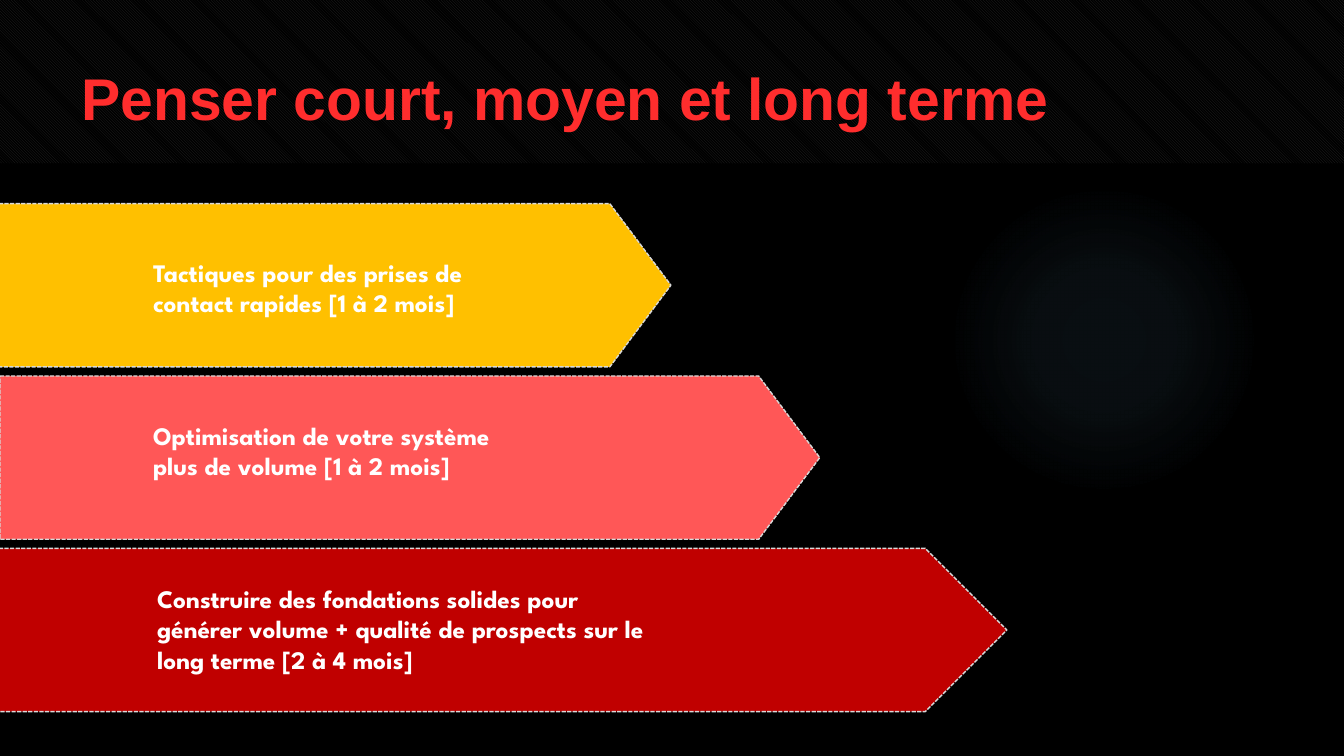
from lxml import etree
from pptx import Presentation
from pptx import util as u
from pptx.dml.color import RGBColor
from pptx.enum import dml, shapes, text
from pptx.oxml import parse_xml
from pptx.oxml.ns import nsdecls, qn


def tint(code):
    return RGBColor.from_string(code)


class Deck:
    """Style and current slide; places are percent of the slide's size."""

    white, edge, red = "FFFFFF", "D9D9D9", "FF2D2D"
    head, body = "Arial", "League Spartan"

    def __init__(self):
        self.prs = Presentation()
        self.prs.slide_width = u.Inches(13.333)
        self.prs.slide_height = u.Inches(7.5)
        self.slide = self.prs.slides.add_slide(self.prs.slide_layouts[6])
        back = self.slide.background.fill
        back.solid()
        back.fore_color.rgb = tint("000000")

    def place(self, x, y, w, h):
        wide, high = self.prs.slide_width, self.prs.slide_height
        return [round(share * full / 100)
                for share, full in ((x, wide), (y, high), (w, wide), (h, high))]

    def shape(self, kind, box):
        item = self.slide.shapes.add_shape(kind, *self.place(*box))
        item.shadow.inherit = False
        item.line.fill.background()
        return item

    def glow(self, box, code, stops):
        ball = self.shape(shapes.MSO_SHAPE.OVAL, box)
        grad = parse_xml(f'<a:gradFill {nsdecls("a")}><a:gsLst/><a:path path="circle">'
                         '<a:fillToRect l="50000" t="50000" r="50000" b="50000"/>'
                         '</a:path></a:gradFill>')
        for pos, alpha in stops:
            stop = etree.SubElement(grad[0], qn("a:gs"), pos=str(pos * 1000))
            hue = etree.SubElement(stop, qn("a:srgbClr"), val=code)
            etree.SubElement(hue, qn("a:alpha"), val=str(alpha * 1000))
        ball._element.spPr.find(qn("a:prstGeom")).addnext(grad)

    def band(self, box, fore, back):
        fill = self.shape(shapes.MSO_SHAPE.RECTANGLE, box).fill
        fill.patterned()
        fill.pattern = dml.MSO_PATTERN.DARK_DOWNWARD_DIAGONAL
        fill.fore_color.rgb = tint(fore)
        fill.back_color.rgb = tint(back)

    def arrow(self, box, code, tip):
        item = self.shape(shapes.MSO_SHAPE.PENTAGON, box)
        item.adjustments[0] = tip
        item.fill.solid()
        item.fill.fore_color.rgb = tint(code)
        item.line.color.rgb = tint(self.edge)
        item.line.width = u.Pt(1)
        item.line.dash_style = dml.MSO_LINE.SQUARE_DOT

    def words(self, box, copy, size, face, code, inset=0.05):
        frame = self.slide.shapes.add_textbox(*self.place(*box)).text_frame
        frame.word_wrap = True
        frame.margin_top = u.Inches(inset)
        frame.auto_size = text.MSO_AUTO_SIZE.NONE
        frame.text = copy
        for run in frame.paragraphs[0].runs:
            run.font.size = u.Pt(size)
            run.font.name = face
            run.font.bold = True
            run.font.color.rgb = tint(code)


def main():
    deck = Deck()

    # Backdrop and title
    deck.glow((70.58, 24.4, 23.1, 41.07), "7AC4F0", [(0, 7), (36, 6), (69, 0)])
    deck.band((0, 0, 100, 21.6), "262626", "000000")
    deck.words((5.33, 6.67, 89.33, 20.4), "Penser court, moyen et long terme",
               42, deck.head, deck.red, inset=0.11)

    # One arrow per term: left, width, colour, tip, then its label
    terms = [
        (-0.08, 50, "FFC000", 0.374, (10.65, 33.33, 28.5, 9.47),
         "Tactiques pour des prises de contact rapides [1 à 2 mois]"),
        (0, 61, "FF5757", 0.374, (10.65, 54.93, 34, 9.47),
         "Optimisation de votre système\vplus de volume [1 à 2 mois]"),
        (-0.08, 75, "C00000", 0.5, (10.95, 76.53, 39, 13.47),
         "Construire des fondations solides pour générer volume + qualité "
         "de prospects sur le long terme [2 à 4 mois]"),
    ]
    top, step, high = 26.93, 22.8, 21.6
    for row, (left, wide, code, tip, box, label) in enumerate(terms):
        deck.arrow((left, top + row * step, wide, high), code, tip)
        deck.words(box, label, 18, deck.body, deck.white)

    deck.prs.save("out.pptx")


if __name__ == "__main__":
    main()
